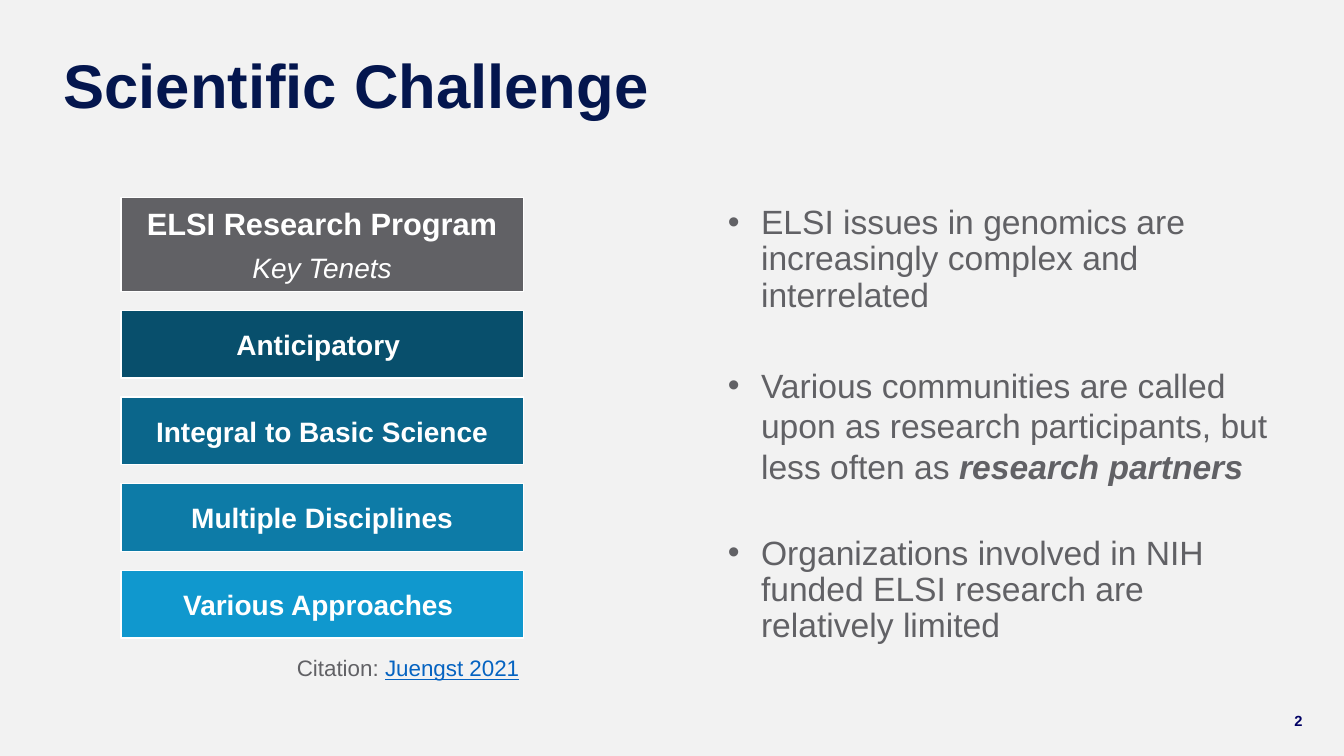
from lxml import etree
from pptx import Presentation
from pptx.dml.color import RGBColor
from pptx.enum.shapes import MSO_SHAPE
from pptx.enum.text import MSO_ANCHOR, MSO_AUTO_SIZE, PP_ALIGN
from pptx.oxml.ns import qn
from pptx.util import Inches, Pt

RECT = MSO_SHAPE.RECTANGLE
MIDDLE = MSO_ANCHOR.MIDDLE
FIXED = MSO_AUTO_SIZE.NONE
LEFT, CENTER, RIGHT = PP_ALIGN.LEFT, PP_ALIGN.CENTER, PP_ALIGN.RIGHT

COLORS = {
    "back": "F2F2F2", "title": "04164E", "gray": "616165", "white": "FFFFFF",
    "link": "0563C1", "number": "000064",
    "deep": "084F6C", "dark": "0B668B", "mid": "0D7BA7", "light": "1098CE",
}


def color(name):
    return RGBColor.from_string(COLORS[name])


def write(shape, runs, new=False, size=20, ink="gray", bold=False, align=LEFT,
          inset=(0.1, 0.05, 0.1, 0.05), before=0, after=0, line=1, bullet=False):
    """Write one paragraph; each run is a text and a dict of font changes."""
    frame = shape.text_frame
    frame.word_wrap = True
    frame.auto_size = FIXED
    frame.vertical_anchor = MIDDLE
    (frame.margin_left, frame.margin_top,
     frame.margin_right, frame.margin_bottom) = map(Inches, inset)
    para = frame.add_paragraph() if new else frame.paragraphs[0]
    if bullet:
        props = para._p.get_or_add_pPr()
        props.set("marL", str(Inches(0.33)))
        props.set("indent", str(Inches(-0.33)))
        etree.SubElement(props, qn("a:buFont")).set("typeface", "Arial")
        etree.SubElement(props, qn("a:buChar")).set("char", "•")
    para.alignment = align
    para.line_spacing = line
    para.space_before = Pt(before)
    para.space_after = Pt(after)
    for text, style in runs:
        run = para.add_run()
        run.text = text
        font = run.font
        font.name = "Arial"
        font.size = Pt(size)
        font.bold = style.get("bold", bold)
        font.italic = style.get("italic", False)
        font.underline = style.get("under", False)
        font.color.rgb = color(style.get("ink", ink))


deck = Presentation()
deck.slide_width, deck.slide_height = Inches(13.33), Inches(7.5)
slide = deck.slides.add_slide(deck.slide_layouts[5])
slide.background.fill.solid()
slide.background.fill.fore_color.rgb = color("back")
shapes = slide.shapes

# Title
title = shapes.title
title.left, title.top = Inches(0.63), Inches(0.38)
title.width, title.height = Inches(12.07), Inches(1)
write(title, [("Scientific Challenge", {})], size=44, ink="title", bold=True,
      inset=(0, 0.05, 0.1, 0.05), line=0.9)

# Key tenets: a header and four equal bars
bars = [(1.96, 0.93, "gray", "ELSI Research Program", 22)]
tenets = [("deep", "Anticipatory "), ("dark", "Integral to Basic Science"),
          ("mid", "Multiple Disciplines"), ("light", "Various Approaches ")]
for i, (fill, text) in enumerate(tenets):
    bars.append((3.08 + 0.86 * i, 0.67, fill, text, 20))

tenet = {"ink": "white", "align": CENTER, "inset": [0.06] * 4, "after": 6}
for top, height, fill, text, size in bars:
    bar = shapes.add_shape(RECT, Inches(1.2), Inches(top), Inches(3.99), Inches(height))
    bar.shadow.inherit = False
    bar.fill.solid()
    bar.fill.fore_color.rgb = color(fill)
    bar.line.color.rgb = color("white")
    bar.line.width = Pt(1)
    write(bar, [(text, {})], size=size, bold=True, **tenet)
    if fill == "gray":
        write(bar, [("Key Tenets", {"italic": True})], new=True, **tenet)

# Citation
cite = shapes.add_textbox(Inches(1.2), Inches(6.52), Inches(3.99), Inches(0.21))
write(cite, [("Citation: ", {}), ("Juengst 2021", {"ink": "link", "under": True})],
      size=16, align=RIGHT, inset=[0.04] * 4, after=6)

# Challenges
points = [
    (0.9, [("ELSI issues in genomics are increasingly complex and interrelated", {})]),
    (1, [("Various communities are called upon as research participants, "
          "but less often as ", {}),
         ("research partners", {"bold": True, "italic": True})]),
    (0.9, [("Organizations involved in NIH funded ELSI research are "
            "relatively limited", {})]),
]
body = shapes.add_textbox(Inches(7.12), Inches(1.59), Inches(5.62), Inches(5.26))
for i, (line, runs) in enumerate(points):
    write(body, runs, new=i > 0, size=24, before=36 if i else 0, line=line, bullet=True)

# Slide number
number = shapes.add_textbox(Inches(12.74), Inches(6.95), Inches(0.38), Inches(0.4))
write(number, [("2", {})], size=10.5, ink="number", bold=True)

deck.save("out.pptx")
